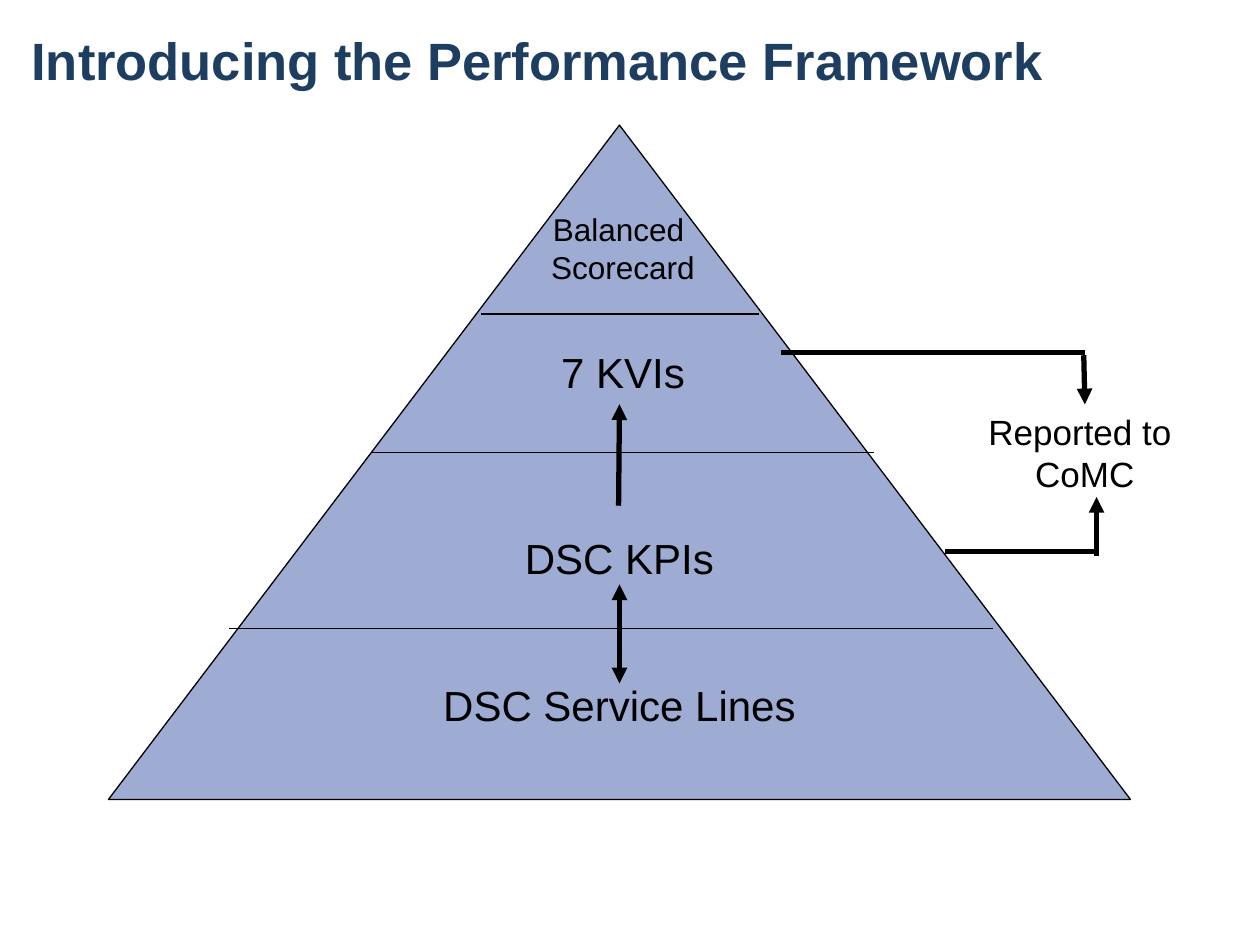
import pptx
import pptx.util
import pptx.dml.color
import pptx.enum.shapes
import pptx.enum.text
import pptx.oxml
import pptx.oxml.ns
import lxml.etree

Pt = pptx.util.Pt
RGB = pptx.dml.color.RGBColor.from_string
ALIGN = pptx.enum.text.PP_ALIGN
ANCHOR = pptx.enum.text.MSO_ANCHOR
QN = pptx.oxml.ns.qn
COLORS = {"title": "1D3E61", "blue": "3E5AA8", "black": "000000"}

deck = pptx.Presentation()
deck.slide_width, deck.slide_height = Pt(720), Pt(540)
slide = deck.slides.add_slide(deck.slide_layouts[6])


def write(shape, lines, size, color="black", align=ALIGN.CENTER, bold=False):
    frame = shape.text_frame
    frame.text = "\n".join(lines)
    for para in frame.paragraphs:
        para.alignment = align
        para.font.name = "Arial"
        para.font.size = Pt(size)
        para.font.bold = bold
        para.font.color.rgb = RGB(COLORS[color])
    return frame


def draw(x1, y1, x2, y2, width, heads=()):
    line = slide.shapes.add_connector(
        pptx.enum.shapes.MSO_CONNECTOR.STRAIGHT, Pt(x1), Pt(y1), Pt(x2), Pt(y2))
    line.line.color.rgb = RGB(COLORS["black"])
    line.line.width = Pt(width)
    for end in heads:
        lxml.etree.SubElement(line.line._get_or_add_ln(), QN("a:" + end), type="triangle")
    lxml.etree.SubElement(line._element.spPr, QN("a:effectLst"))
    return line


# Title
title = slide.shapes.add_textbox(Pt(18), Pt(-4.3), Pt(684), Pt(76.3))
frame = write(title, ["Introducing the Performance Framework"], 30, "title", ALIGN.LEFT, True)
frame.word_wrap = True
frame.vertical_anchor = ANCHOR.MIDDLE
frame.margin_left = frame.margin_right = frame.margin_top = frame.margin_bottom = 0

# Pyramid with its two lower levels
cone = slide.shapes.add_shape(
    pptx.enum.shapes.MSO_SHAPE.ISOSCELES_TRIANGLE, Pt(62), Pt(71.5), Pt(584), Pt(385.3))
cone.shadow.inherit = False
cone.fill.solid()
cone.fill.fore_color.rgb = RGB(COLORS["blue"])
tint = cone._element.spPr.find(".//" + QN("a:srgbClr"))
lxml.etree.SubElement(tint, QN("a:alpha"), val="50000")
cone.line.color.rgb = RGB(COLORS["black"])
cone.line.width = Pt(0.75)
frame = write(cone, ["DSC KPIs", "DSC Service Lines"], 24)
frame.word_wrap = False
frame.vertical_anchor = ANCHOR.MIDDLE
frame.paragraphs[1].space_before = Pt(55.2)

# Level dividers
for left, right, y in [(275, 433.5, 179.5), (212.4, 499.7, 258.5), (131, 567.4, 359.3)]:
    draw(left, y, right, y, 0.75)

# Labels
boxes = {}
for name, x, y, w, h, size, lines in [
    ("score", 307.4, 116.7, 97.2, 51, 18, ["Balanced ", "Scorecard"]),
    ("kvi", 313.2, 194.4, 85.7, 36, 24, ["7 KVIs"]),
    ("report", 557.3, 231.1, 125.3, 55.4, 20, ["Reported to ", "CoMC"]),
]:
    boxes[name] = slide.shapes.add_textbox(Pt(x), Pt(y), Pt(w), Pt(h))
    frame = write(boxes[name], lines, size)
    frame.word_wrap = False
    frame.auto_size = pptx.enum.text.MSO_AUTO_SIZE.SHAPE_TO_FIT_TEXT

# Arrows between levels
draw(354, 334, 354, 390.5, 3, ["headEnd", "tailEnd"])
draw(354, 231, 353.5, 289, 3, ["headEnd"])

# Reporting arrows
draw(446.4, 201.4, 620, 201.4, 3)
draw(540, 315, 626.6, 315, 3)
down = draw(619.3, 203, 620, 231.1, 3, ["tailEnd"])
down.end_connect(boxes["report"], 0)
draw(626.6, 284, 626.6, 317.5, 3, ["headEnd"])

deck.save("out.pptx")
